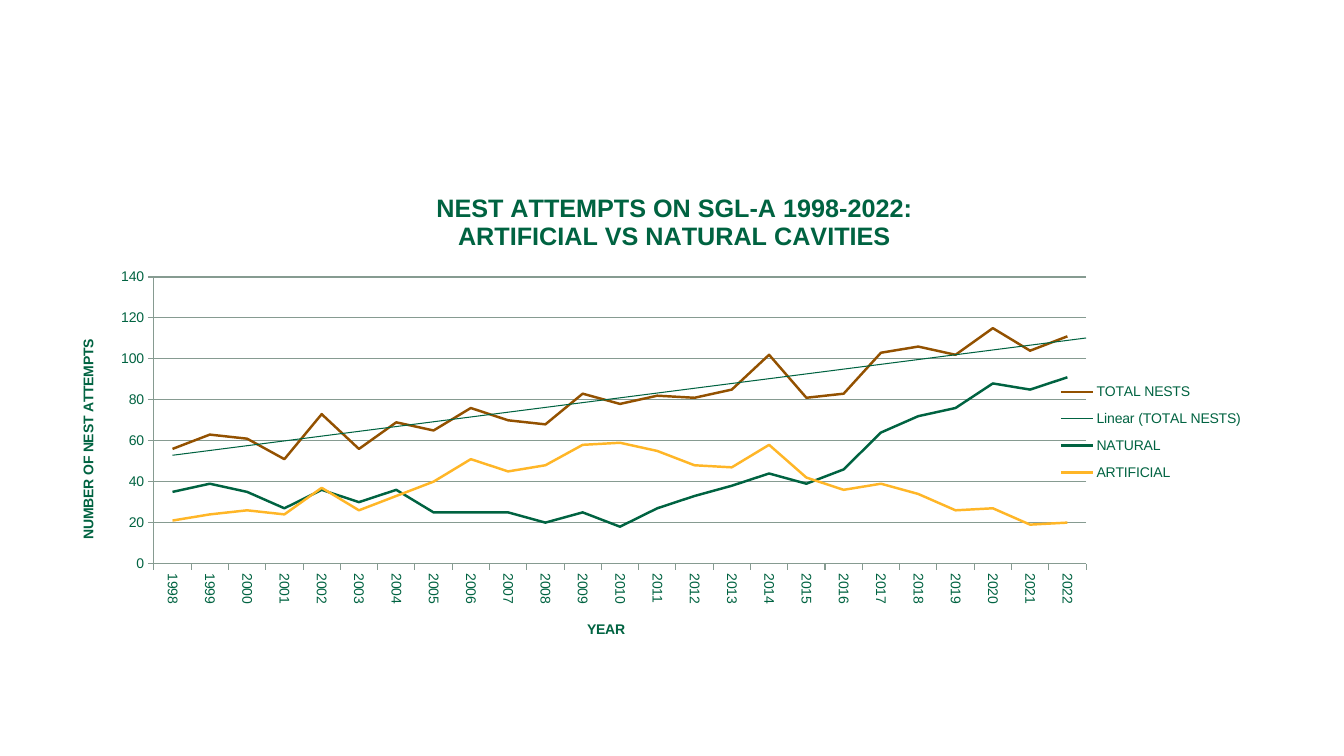
from pptx import Presentation
from pptx.chart.data import CategoryChartData
from pptx.dml.color import RGBColor
from pptx.enum.chart import XL_CHART_TYPE as ChartType
from pptx.enum.chart import XL_LEGEND_POSITION as LegendPosition
from pptx.enum.chart import XL_MARKER_STYLE as MarkerStyle
from pptx.enum.chart import XL_TICK_MARK as TickMark
from pptx.oxml import parse_xml
from pptx.oxml.ns import nsdecls, qn
from pptx.util import Pt

GREEN = "006341"
GRID = "869B91"
YEARS = range(1998, 2023)
NESTS = {
    "TOTAL NESTS": ("935100", (56, 63, 61, 51, 73, 56, 69, 65, 76, 70, 68, 83, 78,
                               82, 81, 85, 102, 81, 83, 103, 106, 102, 115, 104, 111)),
    "NATURAL": (GREEN, (35, 39, 35, 27, 36, 30, 36, 25, 25, 25, 20, 25, 18,
                        27, 33, 38, 44, 39, 46, 64, 72, 76, 88, 85, 91)),
    "ARTIFICIAL": ("FFB627", (21, 24, 26, 24, 37, 26, 33, 40, 51, 45, 48, 58, 59,
                              55, 48, 47, 58, 42, 36, 39, 34, 26, 27, 19, 20)),
}


def color(value):
    """Return the colour for a hex string."""
    return RGBColor.from_string(value)


def style_font(font, size=10, bold=False, fill=GREEN):
    """Apply the chart's typeface to a font."""
    font.name, font.size, font.bold = "Arial", Pt(size), bold
    font.color.rgb = color(fill)


def style_line(line, fill, width):
    """Colour a line and set its width in points."""
    line.color.rgb = color(fill)
    line.width = Pt(width)


def write_text(text_frame, text, **style):
    """Write one formatted paragraph for each line of text."""
    for index, line in enumerate(text.split("\n")):
        paragraph = text_frame.add_paragraph() if index else text_frame.paragraphs[0]
        run = paragraph.add_run()
        run.text = line
        style_font(run.font, **style)


def place(element, index, x, y, w=None, h=None, inner=False):
    """Give a chart part a manual layout in fractions of the chart."""
    for layout in element.findall(qn("c:layout")):
        element.remove(layout)
    settings = [("layoutTarget", "inner")] if inner else []
    settings += [("xMode", "edge"), ("yMode", "edge"), ("x", x), ("y", y)]
    settings += [(name, size) for name, size in (("w", w), ("h", h)) if size]
    body = "".join(f'<c:{name} val="{value}"/>' for name, value in settings)
    element.insert(index, parse_xml(
        f'<c:layout {nsdecls("c")}><c:manualLayout>{body}</c:manualLayout></c:layout>'))


def rotate(element, degrees):
    """Turn the text inside a chart part."""
    body = next(element.iter(qn("a:bodyPr")))
    body.set("rot", str(degrees * 60000))
    body.set("vert", "horz")


def add_title(owner, title, text, x, y, size=10):
    """Write and place the title of the chart or of an axis."""
    owner.has_title = True
    title = getattr(owner, title)
    write_text(title.text_frame, text, size=size, bold=True)
    place(title._element, 1, x, y)
    return title


def style_axis(axis):
    """Format the labels, ticks and line of an axis."""
    axis.major_tick_mark = TickMark.OUTSIDE
    axis.minor_tick_mark = TickMark.NONE
    style_font(axis.tick_labels.font)
    style_line(axis.format.line, GRID, 0.75)


def add_trend(series):
    """Add a linear trend line that runs on to the plot's edge."""
    trend = parse_xml(
        f'<c:trendline {nsdecls("c", "a")}><c:name>Linear ({series.name})</c:name>'
        f'<c:spPr><a:ln w="{Pt(0.75)}"><a:solidFill><a:srgbClr val="{GREEN}"/>'
        '</a:solidFill></a:ln></c:spPr><c:trendlineType val="linear"/>'
        '<c:forward val="0.5"/><c:dispRSqr val="0"/><c:dispEq val="0"/></c:trendline>')
    series._element.find(qn("c:cat")).addprevious(trend)


def add_nest_chart(slide):
    """Add the line chart of nest attempts."""
    data = CategoryChartData()
    data.categories = [str(year) for year in YEARS]
    for name, (_, values) in NESTS.items():
        data.add_series(name, values)
    chart = slide.shapes.add_chart(
        ChartType.LINE, Pt(23.76), Pt(124.56), Pt(907.2), Pt(354.24), data).chart
    style_font(chart.font)
    for series in chart.plots[0].series:
        series.smooth = False
        series.marker.style = MarkerStyle.NONE
        style_line(series.format.line, NESTS[series.name][0], 1.75)
    chart.plots[0].vary_by_categories = False
    add_trend(chart.plots[0].series[0])
    place(chart._chartSpace.chart.plotArea, 0, 0.095, 0.207, 0.734, 0.578, inner=True)
    return chart


def format_chart(chart):
    """Format the titles, axes and legend of the chart."""
    add_title(chart, "chart_title", "NEST ATTEMPTS ON SGL-A 1998-2022:\n"
              "ARTIFICIAL VS NATURAL CAVITIES", 0.315, 0.03, size=18)
    years, attempts = chart.category_axis, chart.value_axis
    for axis in (years, attempts):
        style_axis(axis)
    rotate(years._element.find(qn("c:txPr")), 90)
    add_title(years, "axis_title", "YEAR", 0.434, 0.893)
    title = add_title(attempts, "axis_title", "NUMBER OF NEST ATTEMPTS", 0.034, 0.327)
    rotate(title._element, -90)
    attempts.minimum_scale, attempts.maximum_scale, attempts.major_unit = 0, 140, 20
    attempts.has_major_gridlines = True
    style_line(attempts.major_gridlines.format.line, GRID, 0.75)
    chart.has_legend = True
    chart.legend.position = LegendPosition.RIGHT
    chart.legend.include_in_layout = False
    style_font(chart.legend.font)
    place(chart.legend._element, 1, 0.8, 0.4, 0.16, 0.24)


def main():
    """Build and save the slide."""
    presentation = Presentation()
    presentation.slide_width, presentation.slide_height = Pt(960), Pt(540)
    slide = presentation.slides.add_slide(presentation.slide_layouts[6])
    format_chart(add_nest_chart(slide))
    presentation.save("out.pptx")


if __name__ == "__main__":
    main()
